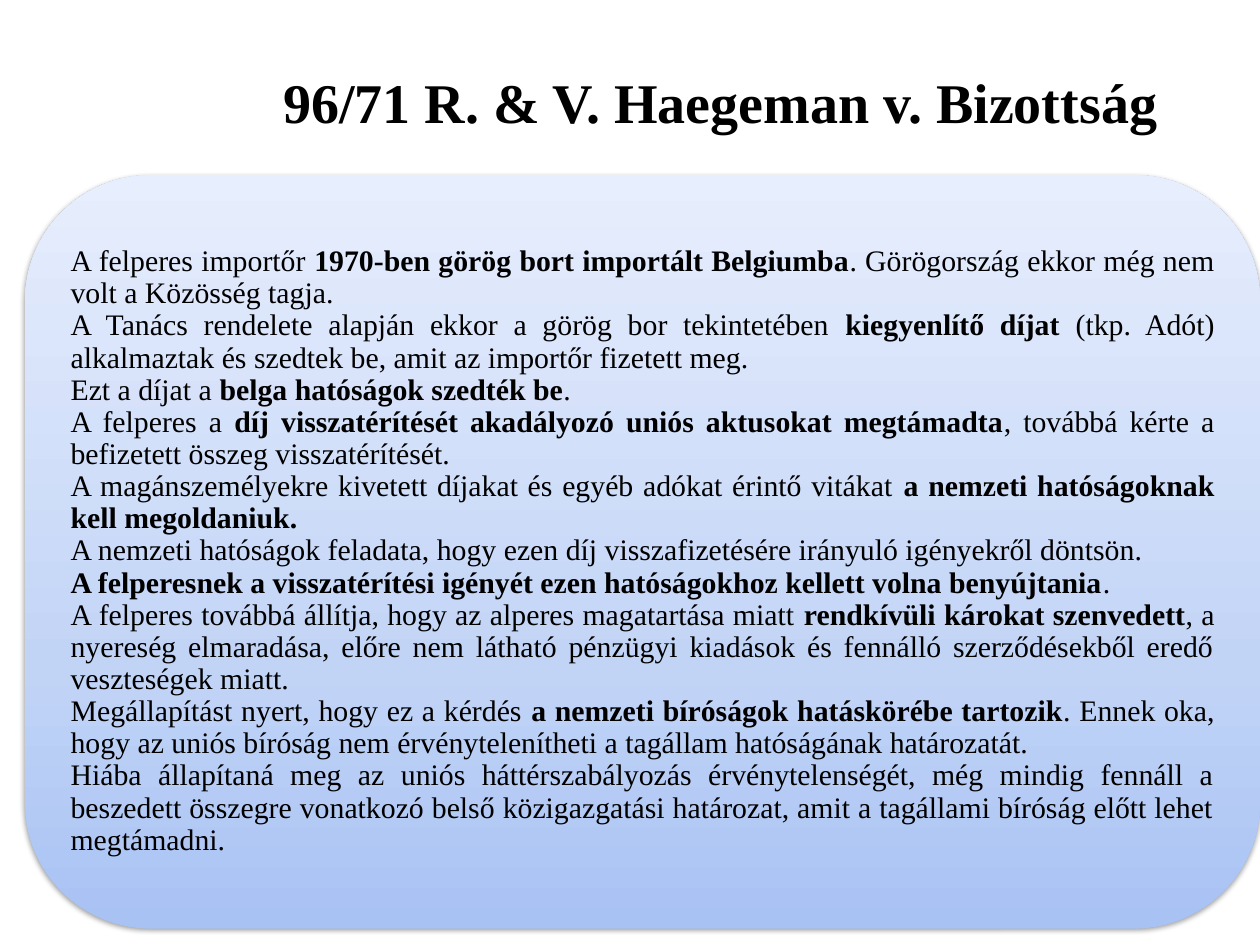
from copy import deepcopy
from dataclasses import dataclass

from lxml.etree import SubElement
from pptx import Presentation
from pptx.dml.color import RGBColor
from pptx.enum.shapes import MSO_SHAPE
from pptx.enum.text import MSO_ANCHOR, PP_ALIGN
from pptx.oxml.ns import qn
from pptx.util import Inches, Pt


@dataclass(frozen=True)
class Theme:
    font: str = "Times New Roman"
    ink: str = "000000"
    title_size: int = 32
    body_size: int = 17
    body_spacing: float = 0.9
    inset: float = 0.07
    gradient: tuple = ((0, "A8C2F4"), (0.35, "C2D4F6"), (1, "E7EEFD"))


TITLE = "96/71 R. & V. Haegeman v. Bizottság"
BODY = [
    "A felperes importőr |1970-ben görög bort importált Belgiumba|. "
    "Görögország ekkor még nem volt a Közösség tagja.",
    "A Tanács rendelete alapján ekkor a görög bor tekintetében |kiegyenlítő díjat |"
    "(tkp. Adót) alkalmaztak és szedtek be, amit az importőr fizetett meg.",
    "Ezt a díjat a |belga hatóságok szedték be|.",
    "A felperes a |díj visszatérítését akadályozó uniós aktusokat megtámadta|, "
    "továbbá kérte a befizetett összeg visszatérítését.",
    "A magánszemélyekre kivetett díjakat és egyéb adókat érintő vitákat |"
    "a nemzeti hatóságoknak kell megoldaniuk.",
    "A nemzeti hatóságok feladata, hogy ezen díj visszafizetésére irányuló "
    "igényekről döntsön.",
    "|A felperesnek a visszatérítési igényét ezen hatóságokhoz kellett volna "
    "benyújtania|.",
    "A felperes továbbá állítja, hogy az alperes magatartása miatt |"
    "rendkívüli károkat szenvedett|, a nyereség elmaradása, előre nem látható "
    "pénzügyi kiadások és fennálló szerződésekből eredő veszteségek miatt.",
    "Megállapítást nyert, hogy ez a kérdés |a nemzeti bíróságok hatáskörébe "
    "tartozik|. Ennek oka, hogy az uniós bíróság nem érvénytelenítheti a tagállam "
    "hatóságának határozatát.",
    "Hiába állapítaná meg az uniós háttérszabályozás érvénytelenségét, még mindig "
    "fennáll a beszedett összegre vonatkozó belső közigazgatási határozat, amit a "
    "tagállami bíróság előtt lehet megtámadni.",
]


class Deck:
    COLS, ROWS = 100, 75

    def __init__(self, theme):
        self.theme = theme
        self.prs = Presentation()
        self.prs.slide_width, self.prs.slide_height = Inches(10), Inches(7.5)
        self.s = self.prs.slides.add_slide(self.prs.slide_layouts[6])

    def box(self, col, row, cols, rows):
        w = self.prs.slide_width / self.COLS
        h = self.prs.slide_height / self.ROWS
        return [round(v) for v in (col * w, row * h, cols * w, rows * h)]

    def text(self, area, paragraphs, size, align, spacing=1.0):
        tf = self.s.shapes.add_textbox(*self.box(*area)).text_frame
        inset = Inches(self.theme.inset)
        frame = {"word_wrap": True, "vertical_anchor": MSO_ANCHOR.MIDDLE}
        frame |= {f"margin_{side}": inset for side in ("left", "right", "top", "bottom")}
        for name, value in frame.items():
            setattr(tf, name, value)
        for i, parts in enumerate(paragraphs):
            p = tf.add_paragraph() if i else tf.paragraphs[0]
            p.alignment, p.line_spacing = align, spacing
            for j, part in enumerate(parts.split("|")):
                if part:
                    self.run(p, part, size, j % 2 == 1)

    def run(self, p, text, size, bold):
        r = p.add_run()
        r.text = text
        style = {"name": self.theme.font, "size": Pt(size), "bold": bold}
        for name, value in style.items():
            setattr(r.font, name, value)
        r.font.color.rgb = RGBColor.from_string(self.theme.ink)

    def panel(self, area):
        sp = self.s.shapes.add_shape(MSO_SHAPE.ROUNDED_RECTANGLE, *self.box(*area))
        sp.line.fill.background()
        sp.fill.gradient()
        sp.fill.gradient_angle = 90
        stops = sp.element.spPr.find(qn("a:gradFill")).find(qn("a:gsLst"))
        stops.insert(1, deepcopy(stops[0]))
        for stop, (position, color) in zip(sp.fill.gradient_stops, self.theme.gradient):
            stop.position = position
            stop.color.rgb = RGBColor.from_string(color)
        self.shadow(sp)

    def shadow(self, sp):
        sp.shadow.inherit = False
        effects = sp.element.spPr.find(qn("a:effectLst"))
        outer = SubElement(effects, qn("a:outerShdw"), blurRad=str(Pt(3.1)),
                           dist=str(Pt(1.6)), dir="5400000", rotWithShape="0")
        color = SubElement(outer, qn("a:srgbClr"), val=self.theme.ink)
        SubElement(color, qn("a:alpha"), val="38000")


def main():
    theme = Theme()
    deck = Deck(theme)
    deck.text((14.7, 0, 85, 16.1), [f"|{TITLE}"], theme.title_size, PP_ALIGN.CENTER)
    deck.panel((2, 13.9, 98, 59.8))
    deck.text((4.9, 16.8, 92.2, 53.9), BODY, theme.body_size, PP_ALIGN.JUSTIFY,
              theme.body_spacing)
    deck.prs.save("out.pptx")


if __name__ == "__main__":
    main()
